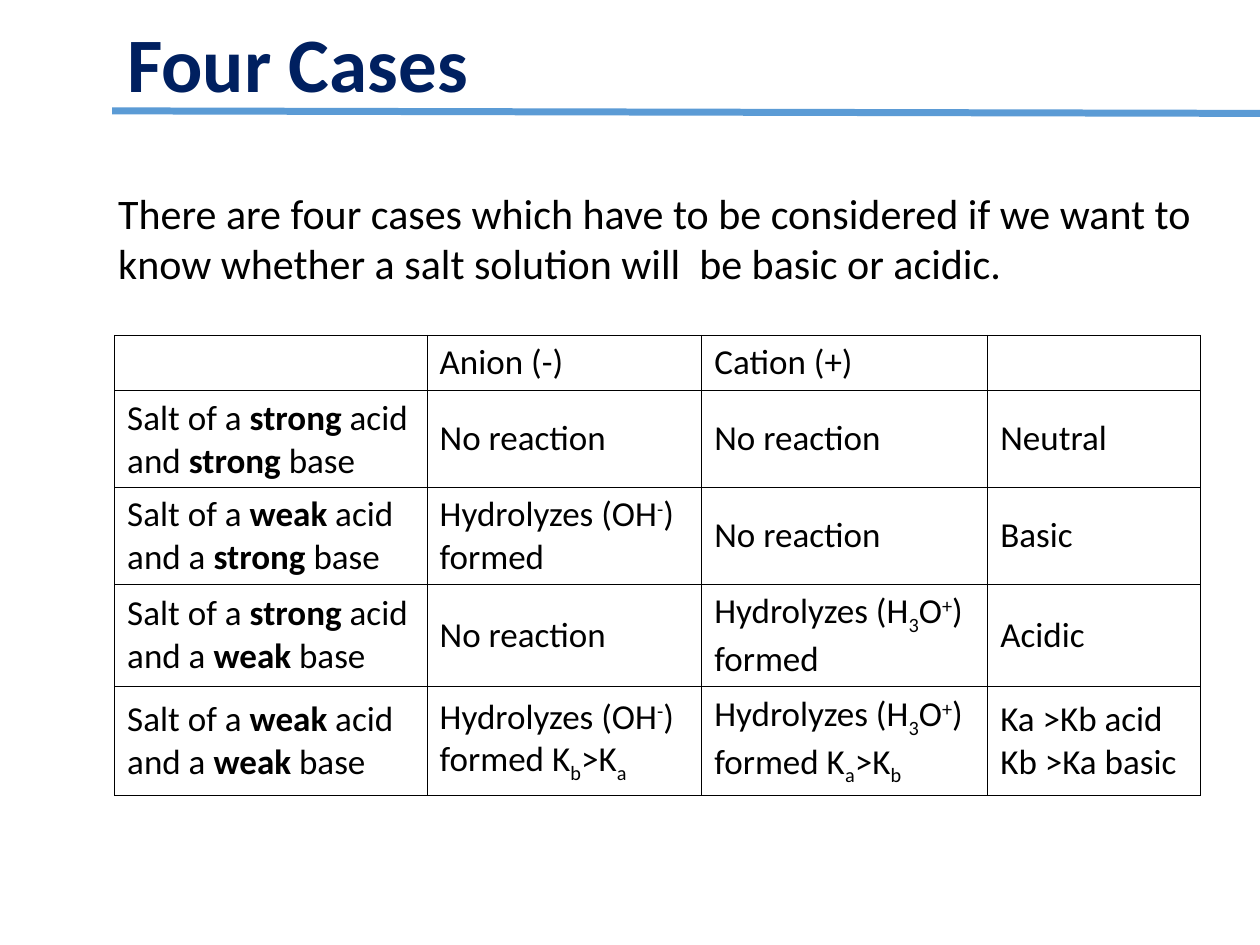
"""Build the slide on the four cases of salt hydrolysis."""
import lxml.etree
import pptx
import pptx.dml.color
import pptx.enum.shapes
import pptx.enum.text
import pptx.oxml.ns
import pptx.util

Inches = pptx.util.Inches
qualified = pptx.oxml.ns.qn
MIDDLE = pptx.enum.text.MSO_ANCHOR.MIDDLE

THEME = {
    "font": "Calibri",
    "title": "002060", "text": "000000", "rule": "5B9BD5", "border": "000000",
    "title_size": 44, "body_size": 24, "table_size": 20,
    "rule_width": 4, "border_width": 0.48,
}

TITLE = "Four Cases"
INTRO = ("There are four cases which have to be considered if we want to know "
         "whether a salt solution will  be basic or acidic.")


def salt(acid, joint, base):
    """Return the runs that name a salt by the strength of its parents."""
    return [("Salt of a ",), (acid, "bold"), (f" acid {joint} ",), (base, "bold"), (" base",)]


def constants(larger, smaller):
    """Return the runs that compare two equilibrium constants."""
    return [(" K",), (larger, "sub"), (">K",), (smaller, "sub")]


NO_REACTION = [("No reaction",)]
HYDROXIDE = [("Hydrolyzes (OH",), ("-", "super"), (") formed",)]
HYDRONIUM = [("Hydrolyzes (H",), ("3", "sub"), ("O",), ("+", "super"), (") formed",)]

ROWS = [
    [[], [("Anion (-)",)], [("Cation (+)",)], []],
    [salt("strong", "and", "strong"), NO_REACTION, NO_REACTION, [("Neutral",)]],
    [salt("weak", "and a", "strong"), HYDROXIDE, NO_REACTION, [("Basic",)]],
    [salt("strong", "and a", "weak"), NO_REACTION, HYDRONIUM, [("Acidic",)]],
    [salt("weak", "and a", "weak"), HYDROXIDE + constants("b", "a"),
     HYDRONIUM + constants("a", "b"),
     [("Ka >Kb acid ",), ("", "break"), ("Kb >Ka basic",)]],
]
COLUMN_WIDTHS = [2.48, 2.18, 2.27, 1.69]
ROW_HEIGHTS = [0.44, 0.76, 0.77, 0.81, 0.86]
BASELINES = {"super": "30000", "sub": "-25000"}


def color(name):
    return pptx.dml.color.RGBColor.from_string(THEME[name])


def add_span(para, text, size, tint="text", style=None):
    """Add one styled run, or a line break, to a paragraph."""
    if style == "break":
        para.add_line_break()
        return
    span = para.add_run()
    span.text = text
    span.font.name = THEME["font"]
    span.font.size = pptx.util.Pt(THEME[size])
    span.font.color.rgb = color(tint)
    span.font.bold = style == "bold"
    if style in BASELINES:
        span.font._element.set("baseline", BASELINES[style])


def add_borders(cell):
    """Draw a thin line on all four sides of a cell."""
    properties = cell._tc.get_or_add_tcPr()
    width = str(int(pptx.util.Pt(THEME["border_width"])))
    for side in ("lnL", "lnR", "lnT", "lnB"):
        line = lxml.etree.SubElement(properties, qualified(f"a:{side}"), w=width)
        fill = lxml.etree.SubElement(line, qualified("a:solidFill"))
        lxml.etree.SubElement(fill, qualified("a:srgbClr"), val=THEME["border"])


def add_rule(slide):
    rule = slide.shapes.add_connector(
        pptx.enum.shapes.MSO_CONNECTOR.STRAIGHT,
        Inches(0.89), Inches(0.88), Inches(10.05), Inches(0.9))
    rule.line.color.rgb = color("rule")
    rule.line.width = pptx.util.Pt(THEME["rule_width"])
    lxml.etree.SubElement(rule._element.spPr, qualified("a:effectLst"))


def add_title(slide):
    title = slide.shapes.title
    title.left, title.top = Inches(0.91), Inches(0)
    title.width, title.height = Inches(9.55), Inches(0.92)
    frame = title.text_frame
    frame.vertical_anchor = pptx.enum.text.MSO_ANCHOR.BOTTOM
    frame.auto_size = pptx.enum.text.MSO_AUTO_SIZE.NONE
    para = frame.paragraphs[0]
    para.alignment = pptx.enum.text.PP_ALIGN.LEFT
    para.line_spacing = 0.9
    add_span(para, TITLE, "title_size", "title", "bold")


def add_intro(slide):
    box = slide.shapes.add_textbox(Inches(0.84), Inches(1.43), Inches(9.16), Inches(0.91))
    box.text_frame.word_wrap = True
    box.text_frame.vertical_anchor = MIDDLE
    add_span(box.text_frame.paragraphs[0], INTRO, "body_size")


def add_cases(slide):
    table = slide.shapes.add_table(
        len(ROWS), len(COLUMN_WIDTHS), Inches(0.91), Inches(2.66),
        Inches(sum(COLUMN_WIDTHS)), Inches(sum(ROW_HEIGHTS))).table
    table.first_row = table.horz_banding = False
    for column, width in zip(table.columns, COLUMN_WIDTHS):
        column.width = Inches(width)
    for row, height, contents in zip(table.rows, ROW_HEIGHTS, ROWS):
        row.height = Inches(height)
        for cell, spans in zip(row.cells, contents):
            add_borders(cell)
            cell.fill.background()
            cell.vertical_anchor = MIDDLE
            for text, *style in spans:
                add_span(cell.text_frame.paragraphs[0], text, "table_size", "text", *style)


def main():
    deck = pptx.Presentation()
    deck.slide_width, deck.slide_height = Inches(10), Inches(7.5)
    slide = deck.slides.add_slide(deck.slide_layouts.get_by_name("Title Only"))
    add_rule(slide)
    add_title(slide)
    add_intro(slide)
    add_cases(slide)
    deck.save("out.pptx")


if __name__ == "__main__":
    main()
